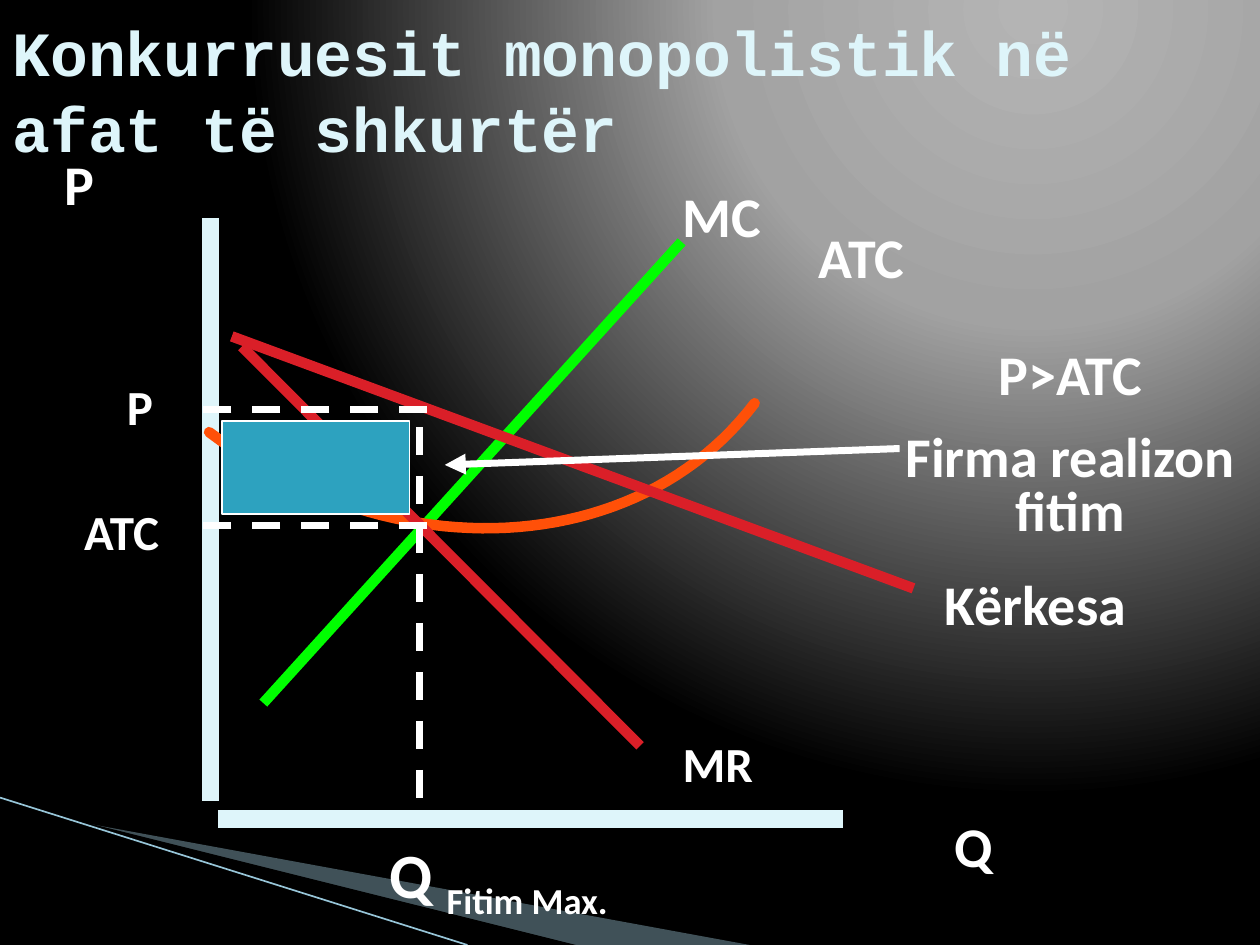
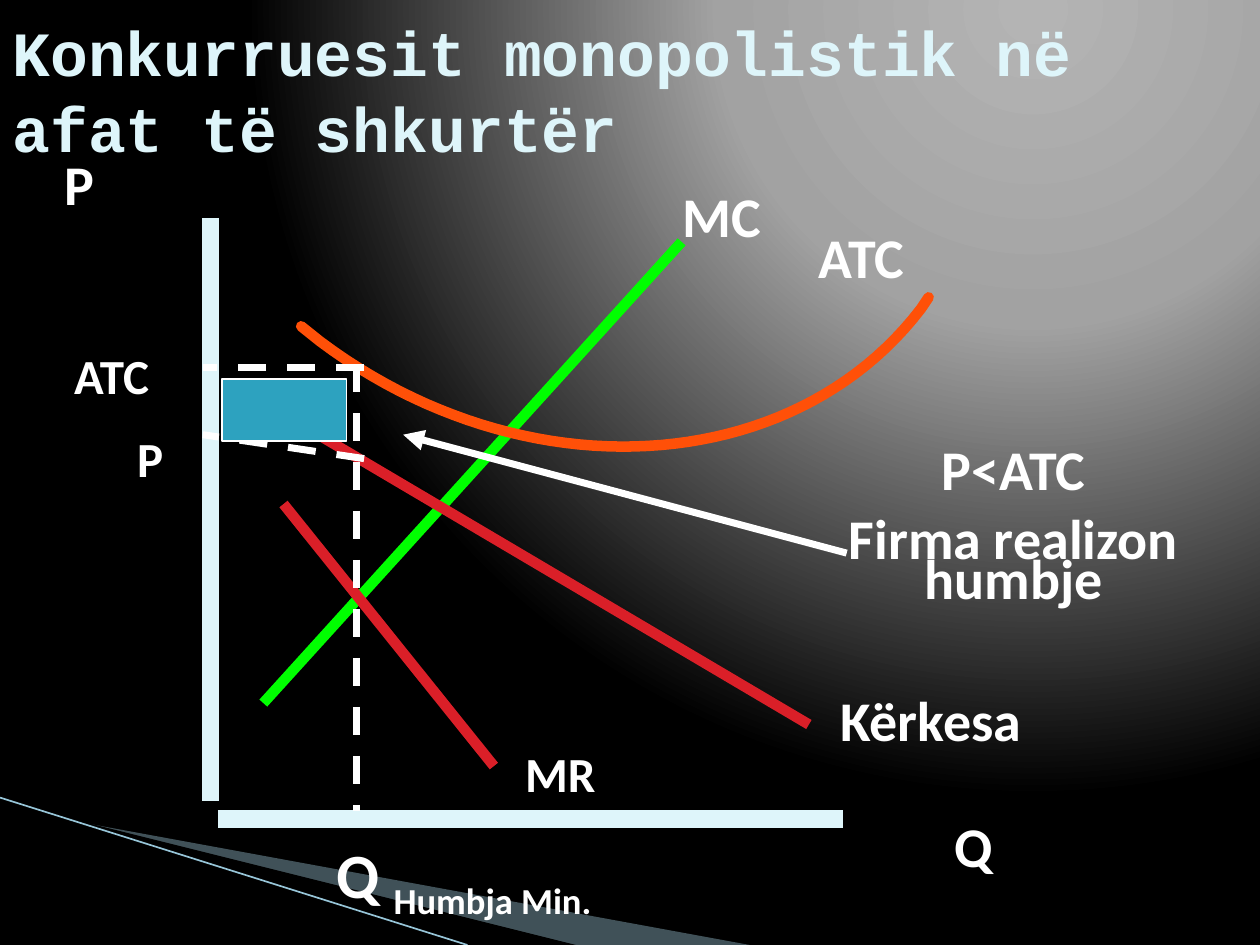
from lxml.etree import SubElement as Sub
from pptx import Presentation
from pptx.dml.color import RGBColor as Rgb
from pptx.enum.dml import MSO_LINE
from pptx.enum.shapes import MSO_CONNECTOR, MSO_SHAPE
from pptx.enum.text import MSO_ANCHOR, MSO_AUTO_SIZE, PP_ALIGN
from pptx.oxml.ns import qn
from pptx.util import Inches, Pt

CELL = Inches(0.1)
COLS, ROWS = 100, 75
TITLE = "Konkurruesit monopolistik në afat të shkurtër"
INK = {
    "ice": "DEF5FA", "white": "FFFFFF", "black": "000000", "green": "00FF00",
    "orange": "FF5008", "red": "DA1F28", "teal": "2DA2BF",
    "band": "A0CBDC", "edge": "97C5D8",
}
GLOW = [(0, "B4B4B4"), (40, "A2A2A2"), (100, "000000")]

AXES = [((16.7, 17.3), (16.7, 63.6)), ((17.3, 65), (66.9, 65))]
MC = ((20.9, 55.8), (54.1, 19.2))
NAMES = [("Q", 74.8, 63.9, 5.4, 32), ("MC", 53.2, 13.9, 8.9, 32),
         ("ATC", 64, 17.2, 11.1, 32), ("P", 4.1, 11.4, 4.9, 32)]

GAIN = {
    "curve": [(59.9, 32), (50.6, 44.3), (31.2, 45.3), (16.6, 34.3)],
    "ends": ([], []),
    "names": [("ATC", 5.7, 39.3, 10, 28), ("P", 9.1, 29.4, 4.6, 28),
              ("MR", 53.2, 57.7, 8, 28), ("Kërkesa", 74, 44.7, 19.3, 32)],
    "best": ("Fitim Max.", 29.9, 23.5),
    "sales": [((18.4, 26.7), (72.5, 46.7)), ((19.2, 27.5), (50.8, 59.2))],
    "q": 33.3, "top": 33.9, "levels": [(41.7, 41.7), (32.5, 32.5)],
    "area": (33.4, 7.4),
    "note": ("P>ATC\nFirma realizon fitim", (70, 27.5, 29.9, 16.5), 0.8),
    "arrow": ((71.4, 35.6), (35.3, 36.9)),
}
LOSS = {
    "curve": [(73.1, 24.5), (62.8, 38), (41.5, 39.2), (25.4, 27.1)],
    "ends": ([(73.7, 23.6)], [(23.9, 25.9)]),
    "names": [("P", 9.9, 33.5, 4.6, 28), ("ATC", 4.9, 26.9, 10, 28),
              ("MR", 40.7, 58.5, 8, 28), ("Kërkesa", 65.7, 53.9, 19.3, 32)],
    "best": ("Humbja Min.", 25.7, 27),
    "sales": [((23.4, 33.4), (64.2, 57.5)), ((22.5, 40), (39.2, 60.8))],
    "q": 28.3, "top": 28.9, "levels": [(36.4, 34.5), (29.2, 29.2)],
    "area": (30.1, 4.9),
    "note": ("P<ATC\nFirma realizon humbje", (65.9, 35.9, 29.1, 16.4), 0.6),
    "arrow": ((67.2, 43.9), (32, 34.5)),
}


def grid(*cells):
    return [round(c * CELL) for c in cells]


def tint(name):
    return Rgb.from_string(INK[name])


def glow(page):
    page.background.fill.gradient()
    grad = page.element.find(".//" + qn("p:bg")).find(".//" + qn("a:gradFill"))
    for kid in list(grad):
        grad.remove(kid)
    stops = Sub(grad, qn("a:gsLst"))
    for pos, shade in GLOW:
        stop = Sub(stops, qn("a:gs"), pos=str(pos * 1000))
        Sub(stop, qn("a:srgbClr"), val=shade)
    ring = Sub(grad, qn("a:path"), path="circle")
    Sub(ring, qn("a:fillToRect"), l="65000", t="0", r="0", b="98000")


def line(slide, ends, ink, width, dash=False, tip=False):
    (x1, y1), (x2, y2) = ends
    link = slide.shapes.add_connector(MSO_CONNECTOR.STRAIGHT, *grid(x1, y1, x2, y2))
    link.line.color.rgb = tint(ink)
    link.line.width = Pt(width)
    if dash:
        link.line.dash_style = MSO_LINE.DASH
    props = link._element.spPr
    if tip:
        Sub(props.find(qn("a:ln")), qn("a:tailEnd"), type="triangle")
    Sub(props, qn("a:effectLst"))


def outline(slide, dots, close):
    first, *rest = [grid(*dot) for dot in dots]
    pen = slide.shapes.build_freeform(*first)
    pen.add_line_segments(rest, close=close)
    shape = pen.convert_to_shape()
    shape.shadow.inherit = False
    return shape


def band(slide, dots, ink, alpha=100):
    shape = outline(slide, dots, True)
    shape.fill.solid()
    shape.fill.fore_color.rgb = tint(ink)
    shape.line.fill.background()
    if alpha < 100:
        tone = shape._element.spPr.find(".//" + qn("a:srgbClr"))
        Sub(tone, qn("a:alpha"), val=str(alpha * 1000))


def bend(a, b, c, d, steps=48):
    for i in range(steps + 1):
        t = i / steps
        u = 1 - t
        yield tuple(u**3 * p + 3 * u * u * t * q + 3 * u * t * t * r + t**3 * s
                    for p, q, r, s in zip(a, b, c, d))


def curve(slide, knots, ends):
    head, tail = ends
    shape = outline(slide, head + list(bend(*knots)) + tail, False)
    shape.fill.background()
    shape.line.color.rgb = tint("orange")
    shape.line.width = Pt(6)
    edge = shape._element.spPr.find(qn("a:ln"))
    edge.set("cap", "rnd")
    Sub(edge, qn("a:round"))


def style(run, size, face="Calibri", ink="white"):
    run.font.name = face
    run.font.size = Pt(size)
    run.font.bold = True
    run.font.color.rgb = tint(ink)


def label(slide, text, x, y, wide, size, high=None, wrap=False):
    box = slide.shapes.add_textbox(*grid(x, y, wide, high or size * 0.2))
    frame = box.text_frame
    frame.word_wrap = wrap
    frame.auto_size = MSO_AUTO_SIZE.SHAPE_TO_FIT_TEXT
    frame.text = text
    for para in frame.paragraphs:
        for run in para.runs:
            style(run, size)
    return frame


def best(slide, text, x, wide):
    para = label(slide, "Q ", x, 65.8, wide, 36).paragraphs[0]
    run = para.add_run()
    run.text = text
    style(run, 36)
    run._r.get_or_add_rPr().set("baseline", "-25000")


def note(slide, text, spot, gap):
    x, y, wide, high = spot
    frame = label(slide, text, x, y, wide, 32, high, True)
    for i, para in enumerate(frame.paragraphs):
        para.alignment = PP_ALIGN.CENTER
        para.line_spacing = gap
        para.space_before = Pt(16 if i else 0)


def area(slide, q, top, high):
    left = 17.6
    box = slide.shapes.add_shape(MSO_SHAPE.RECTANGLE,
                                 *grid(left, top, q - 0.8 - left, high))
    box.shadow.inherit = False
    box.fill.solid()
    box.fill.fore_color.rgb = tint("teal")
    box.line.color.rgb = tint("white")
    box.line.width = Pt(1)


def title(slide):
    head = slide.shapes.title
    head.left, head.top, head.width, head.height = grid(0, 2.5, 98.3, 9.2)
    frame = head.text_frame
    frame.text = TITLE
    frame.word_wrap = True
    frame.auto_size = MSO_AUTO_SIZE.NONE
    frame.vertical_anchor = MSO_ANCHOR.MIDDLE
    para = frame.paragraphs[0]
    para.alignment = PP_ALIGN.LEFT
    style(para.runs[0], 36, "Courier New", "ice")


def frame_up(slide):
    band(slide, [(5.5, 65.1), (59.5, ROWS), (45.6, ROWS), (5.5, 65)], "band", 40)
    band(slide, [(5.3, 64.9), (45.7, ROWS), (37.2, ROWS), (5.4, 65)], "black")
    line(slide, ((0, 63.3), (37.1, ROWS)), "edge", 0.95)
    title(slide)
    for axis in AXES:
        line(slide, axis, "ice", 10)
    line(slide, MC, "green", 6)


def plot(slide, case):
    frame_up(slide)
    curve(slide, case["curve"], case["ends"])
    for name in NAMES + case["names"]:
        label(slide, *name)
    best(slide, *case["best"])
    for ends in case["sales"]:
        line(slide, ends, "red", 6)
    q = case["q"]
    for right, left in case["levels"]:
        line(slide, ((q + 0.6, right), (16.1, left)), "white", 4, dash=True)
    line(slide, ((q, case["top"]), (q, 64.4)), "white", 4, dash=True)
    area(slide, q, *case["area"])
    note(slide, *case["note"])
    line(slide, case["arrow"], "white", 4, tip=True)


def main():
    deck = Presentation()
    deck.slide_width, deck.slide_height = grid(COLS, ROWS)
    glow(deck.slide_master)
    for case in (GAIN, LOSS):
        plot(deck.slides.add_slide(deck.slide_layouts[5]), case)
    deck.save("out.pptx")


if __name__ == "__main__":
    main()
